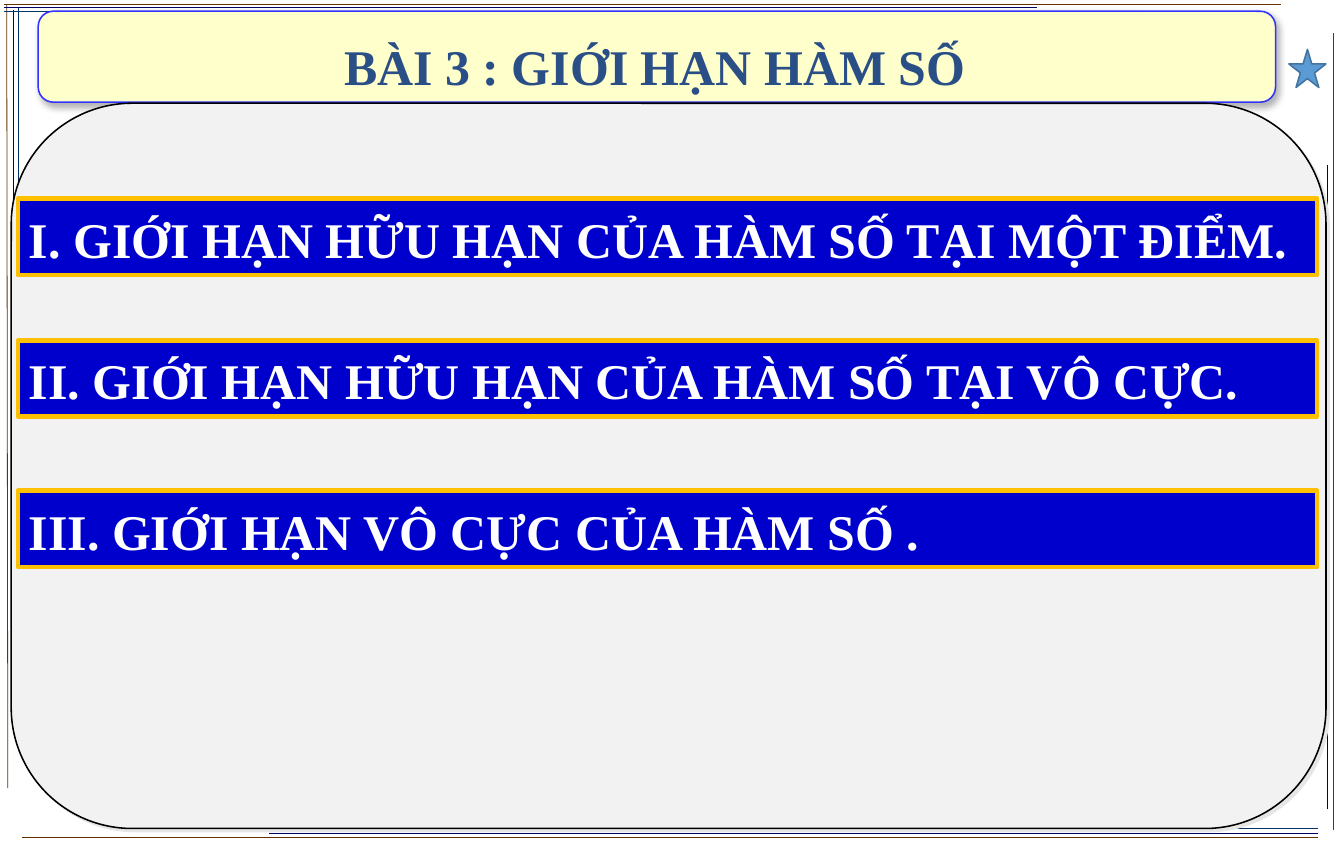
from lxml.etree import SubElement
from pptx import Presentation
from pptx.dml.color import RGBColor
from pptx.enum.shapes import MSO_CONNECTOR as Connector, MSO_SHAPE as Shape
from pptx.enum.text import MSO_ANCHOR as Anchor, MSO_AUTO_SIZE as AutoSize, PP_ALIGN as Align
from pptx.oxml.ns import qn
from pptx.util import Emu, Pt

BROWN = RGBColor(0x66, 0x33, 0x00)
NAVY = RGBColor(0x00, 0x00, 0x66)
TEAL = RGBColor(0x00, 0x33, 0x66)
CREAM = RGBColor(0xFF, 0xFF, 0xCC)
BRIGHT_BLUE = RGBColor(0x33, 0x33, 0xFF)
TITLE_BLUE = RGBColor(0x2A, 0x4F, 0x86)
BAR_BLUE = RGBColor(0x00, 0x00, 0xCC)
GOLD = RGBColor(0xFF, 0xC0, 0x00)
PANEL_GRAY = RGBColor(0xF2, 0xF2, 0xF2)
SHADOW_GRAY = RGBColor(0xE7, 0xE6, 0xE6)
STAR_BLUE = RGBColor(0x5B, 0x9B, 0xD5)
STAR_EDGE = RGBColor(0x43, 0x73, 0x9E)
BLACK = RGBColor(0x00, 0x00, 0x00)
WHITE = RGBColor(0xFF, 0xFF, 0xFF)

FRAME_LINES = [
    (6, 4, 7, 702, BROWN),
    (12, 9, 12, 325, NAVY),
    (16, 7, 16, 174, TEAL),
    (4, 4, 1141, 4, BROWN),
    (4, 7, 924, 7, NAVY),
    (4, 10, 491, 10, TEAL),
    (1188, 739, 1188, 29, BROWN),
    (1182, 721, 1182, 147, NAVY),
    (1174, 746, 20, 746, BROWN),
    (1174, 742, 240, 742, NAVY),
    (1174, 738, 679, 738, TEAL),
]
SECTIONS = [
    (177, "I. GIỚI HẠN HỮU HẠN CỦA HÀM SỐ TẠI MỘT ĐIỂM."),
    (303, "II. GIỚI HẠN HỮU HẠN CỦA HÀM SỐ TẠI VÔ CỰC."),
    (437, "III. GIỚI HẠN VÔ CỰC CỦA HÀM SỐ ."),
]


def px(length):
    return Emu(length * 9144)


class SlideBuilder:
    """Draws styled elements on the current slide, in px at 100 to the inch."""

    font_name = "Times New Roman"
    font_size = Pt(32)

    def __init__(self, slide):
        self.slide = slide

    def style_text(self, paragraph, color, align):
        paragraph.alignment = align
        font = paragraph.font
        font.name, font.size, font.bold = self.font_name, self.font_size, True
        font.color.rgb = color

    def line(self, x1, y1, x2, y2, color):
        connector = self.slide.shapes.add_connector(
            Connector.STRAIGHT, px(x1), px(y1), px(x2), px(y2))
        connector.line.color.rgb = color
        connector.line.width = Pt(0.5)
        SubElement(connector.element.spPr, qn("a:effectLst"))

    def shape(self, kind, left, top, width, height, fill, edge, weight=1):
        shape = self.slide.shapes.add_shape(
            kind, px(left), px(top), px(width), px(height))
        shape.shadow.inherit = False
        shape.fill.solid()
        shape.fill.fore_color.rgb = fill
        shape.line.color.rgb = edge
        shape.line.width = Pt(weight)
        return shape

    def shadow(self, shape, color, opacity, blur, distance, degrees):
        effects = shape.element.spPr.find(qn("a:effectLst"))
        outer = SubElement(
            effects, qn("a:outerShdw"), blurRad=str(Pt(blur)), dist=str(Pt(distance)),
            dir=str(degrees * 60000), algn="tl", rotWithShape="0")
        tint = SubElement(outer, qn("a:srgbClr"), val=str(color))
        SubElement(tint, qn("a:alpha"), val=str(opacity * 1000))

    def title(self, text, left, top, width, height, backdrop):
        title = self.slide.shapes.title
        title.left, title.top = px(left), px(top)
        title.width, title.height = px(width), px(height)
        frame = title.text_frame
        frame.text = text
        frame.word_wrap = True
        frame.auto_size = AutoSize.NONE
        frame.vertical_anchor = Anchor.MIDDLE
        frame.margin_left, frame.margin_right = px(10), px(34)
        frame.margin_top = frame.margin_bottom = px(5)
        paragraph = frame.paragraphs[0]
        paragraph.line_spacing = 1.0
        self.style_text(paragraph, TITLE_BLUE, Align.CENTER)
        backdrop.element.addnext(title.element)

    def section_bar(self, top, text):
        bar = self.shape(Shape.RECTANGLE, 16, top, 1157, 68, BAR_BLUE, GOLD, 3)
        frame = bar.text_frame
        frame.text = text
        frame.word_wrap = True
        frame.auto_size = AutoSize.SHAPE_TO_FIT_TEXT
        frame.vertical_anchor = Anchor.TOP
        paragraph = frame.paragraphs[0]
        paragraph.line_spacing = 1.07
        self.style_text(paragraph, WHITE, Align.LEFT)


def main():
    presentation = Presentation()
    presentation.slide_width, presentation.slide_height = px(1197), px(750)
    builder = SlideBuilder(presentation.slides.add_slide(presentation.slide_layouts[5]))

    for frame_line in FRAME_LINES:
        builder.line(*frame_line)

    banner = builder.shape(
        Shape.ROUNDED_RECTANGLE, 34, 10, 1102, 81, CREAM, BRIGHT_BLUE)
    builder.shadow(banner, BLACK, 30, 4.5, 2.6, 53)
    builder.title("BÀI 3 : GIỚI HẠN HÀM SỐ", 55, 26, 1081, 65, banner)

    panel = builder.shape(
        Shape.ROUNDED_RECTANGLE, 10, 92, 1171, 646, PANEL_GRAY, BLACK)
    builder.shadow(panel, SHADOW_GRAY, 100, 0, 2.8, 45)

    for top, text in SECTIONS:
        builder.section_bar(top, text)
    builder.shape(Shape.STAR_5_POINT, 1148, 44, 33, 34, STAR_BLUE, STAR_EDGE)

    presentation.save("out.pptx")


if __name__ == "__main__":
    main()
